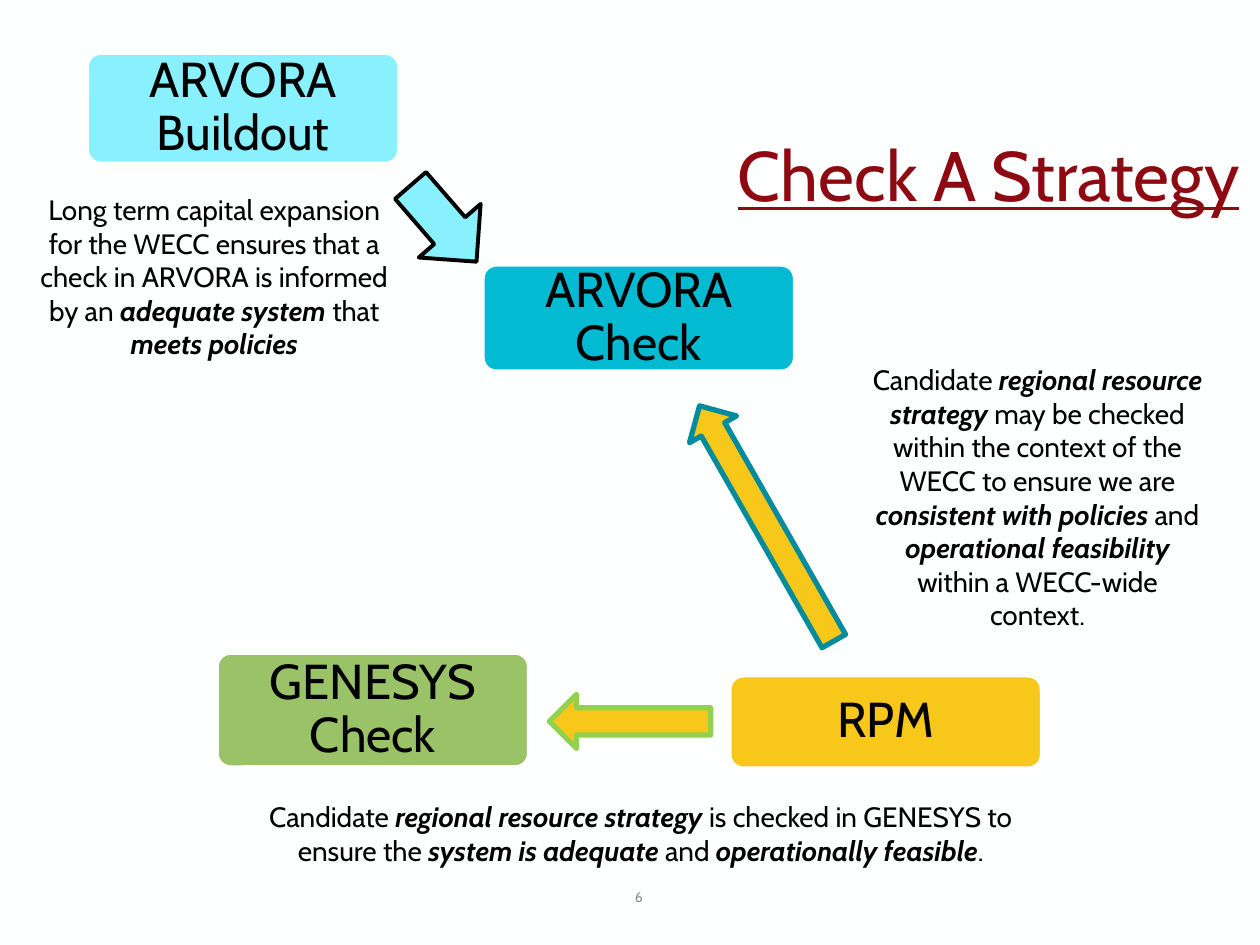
import pptx
import pptx.util
import pptx.dml.color
import pptx.enum.shapes
import pptx.enum.text

Inches = pptx.util.Inches
Pt = pptx.util.Pt
RGBColor = pptx.dml.color.RGBColor
SHAPES = pptx.enum.shapes.MSO_SHAPE
ANCHOR = pptx.enum.text.MSO_ANCHOR
CENTER = pptx.enum.text.PP_ALIGN.CENTER

FONT = "Cabin"
PAPER = RGBColor(0xFE, 0xFF, 0xFF)
BLACK = RGBColor(0x00, 0x00, 0x00)
GRAY = RGBColor(0x8C, 0x8C, 0x8C)
RED = RGBColor(0x8E, 0x0A, 0x12)
AQUA = RGBColor(0x89, 0xF0, 0xFE)
TURQUOISE = RGBColor(0x02, 0xBA, 0xD2)
TEAL = RGBColor(0x01, 0x8C, 0x9E)
GOLD = RGBColor(0xF7, 0xC7, 0x19)
GREEN = RGBColor(0x9A, 0xC3, 0x68)
LIME = RGBColor(0x92, 0xD0, 0x50)

BOX_WIDTH = 2.46
CORNER_RADIUS = 0.1

# Model boxes: text, left, top, height, fill
MODELS = [
    ("ARVORA Check", 3.84, 2.11, 0.83, TURQUOISE),
    ("RPM", 5.8, 5.37, 0.72, GOLD),
    ("GENESYS Check", 1.73, 5.19, 0.89, GREEN),
    ("ARVORA Buildout", 0.7, 0.43, 0.86, AQUA),
]

# Block arrows: preset, left, top, width, height, rotation, fill, line, line width
ARROWS = [
    (SHAPES.RIGHT_ARROW, 4.36, 5.51, 1.28, 0.43, 180, GOLD, LIME, 3),
    (SHAPES.LEFT_ARROW, 5.01, 3.94, 2.15, 0.43, 60.3, GOLD, TEAL, 3),
    (SHAPES.RIGHT_ARROW, 3.12, 1.45, 0.8, 0.65, 49.1, AQUA, BLACK, 2.25),
]

# Notes: left, top, width, height, runs that alternate plain and emphasised
NOTES = [
    (1.73, 6.3, 6.71, 0.64, [
        "Candidate ", "regional resource strategy ",
        "is checked in GENESYS to ensure the ", "system is adequate ",
        "and ", "operationally feasible", "."]),
    (6.8, 2.83, 2.87, 2.52, [
        "Candidate ", "regional resource strategy",
        " may be checked within the context of the WECC to ensure we are ",
        "consistent with policies", " and ", "operational feasibility ",
        "within a WECC-wide context."]),
    (0.14, 1.48, 3.12, 1.45, [
        "Long term capital expansion for the WECC ensures that a check in "
        "ARVORA is informed by an ", "adequate system ", "that ",
        "meets policies"]),
]


def add_run(para, text, size, color, emphasis=False):
    span = para.add_run()
    span.text = text
    span.font.name = FONT
    span.font.size = Pt(size)
    span.font.color.rgb = color
    span.font.bold = emphasis
    span.font.italic = emphasis
    return span


def style_shape(shape, fill, line, line_width):
    shape.shadow.inherit = False
    shape.fill.solid()
    shape.fill.fore_color.rgb = fill
    shape.line.color.rgb = line
    shape.line.width = Pt(line_width)


def add_title(page, text):
    title = page.shapes.title
    title.left, title.top = Inches(5.51), Inches(0.92)
    title.width, title.height = Inches(4.67), Inches(1)
    frame = title.text_frame
    frame.auto_size = pptx.enum.text.MSO_AUTO_SIZE.NONE
    frame.vertical_anchor = ANCHOR.MIDDLE
    para = frame.paragraphs[0]
    para.alignment = CENTER
    para.line_spacing = 0.9
    add_run(para, text, 40, RED).font.underline = True


def add_model(page, text, left, top, height, fill):
    box = page.shapes.add_shape(
        SHAPES.ROUNDED_RECTANGLE, Inches(left), Inches(top),
        Inches(BOX_WIDTH), Inches(height))
    box.adjustments[0] = CORNER_RADIUS / height
    style_shape(box, fill, PAPER, 1)
    frame = box.text_frame
    frame.word_wrap = True
    frame.vertical_anchor = ANCHOR.MIDDLE
    frame.margin_left = frame.margin_right = Inches(0.19)
    frame.margin_top = frame.margin_bottom = Inches(0.19)
    para = frame.paragraphs[0]
    para.alignment = CENTER
    para.line_spacing = 0.9
    add_run(para, text, 28, BLACK)


def add_arrow(page, preset, left, top, width, height, rotation,
              fill, line, line_width):
    arrow = page.shapes.add_shape(
        preset, Inches(left), Inches(top), Inches(width), Inches(height))
    arrow.rotation = rotation
    style_shape(arrow, fill, line, line_width)


def add_note(page, left, top, width, height, texts, size=16, color=BLACK,
             anchor=ANCHOR.TOP):
    box = page.shapes.add_textbox(
        Inches(left), Inches(top), Inches(width), Inches(height))
    frame = box.text_frame
    frame.word_wrap = True
    frame.vertical_anchor = anchor
    para = frame.paragraphs[0]
    para.alignment = CENTER
    for index, text in enumerate(texts):
        add_run(para, text, size, color, emphasis=index % 2 == 1)


def main():
    deck = pptx.Presentation()
    deck.slide_width, deck.slide_height = Inches(10), Inches(7.5)
    page = deck.slides.add_slide(deck.slide_layouts[5])
    page.background.fill.solid()
    page.background.fill.fore_color.rgb = PAPER

    add_title(page, "Check A Strategy")

    # Models and the flow between them
    for model in MODELS:
        add_model(page, *model)
    for arrow in ARROWS:
        add_arrow(page, *arrow)

    # Explanations
    for note in NOTES:
        add_note(page, *note)

    # Page number
    add_note(page, 4.78, 6.92, 0.58, 0.4, ["6"], 8, GRAY, ANCHOR.MIDDLE)

    deck.save("out.pptx")


if __name__ == "__main__":
    main()
